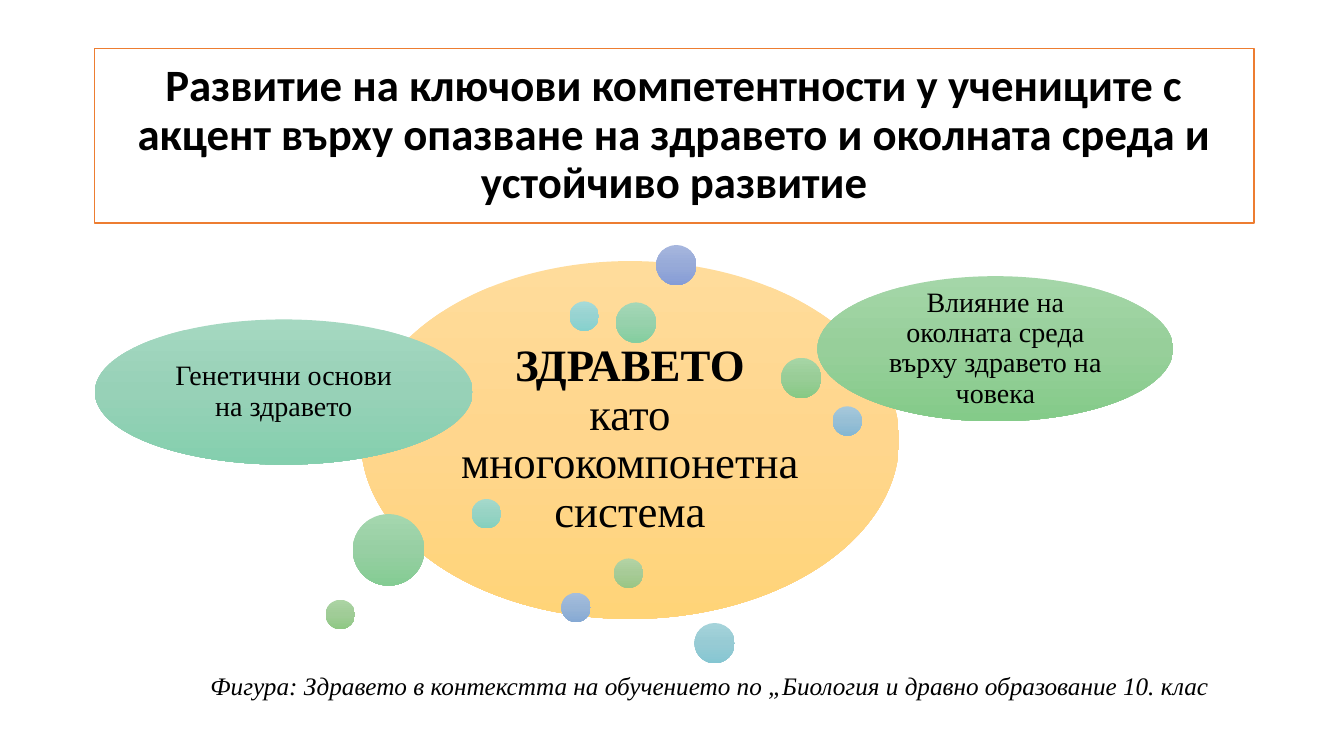
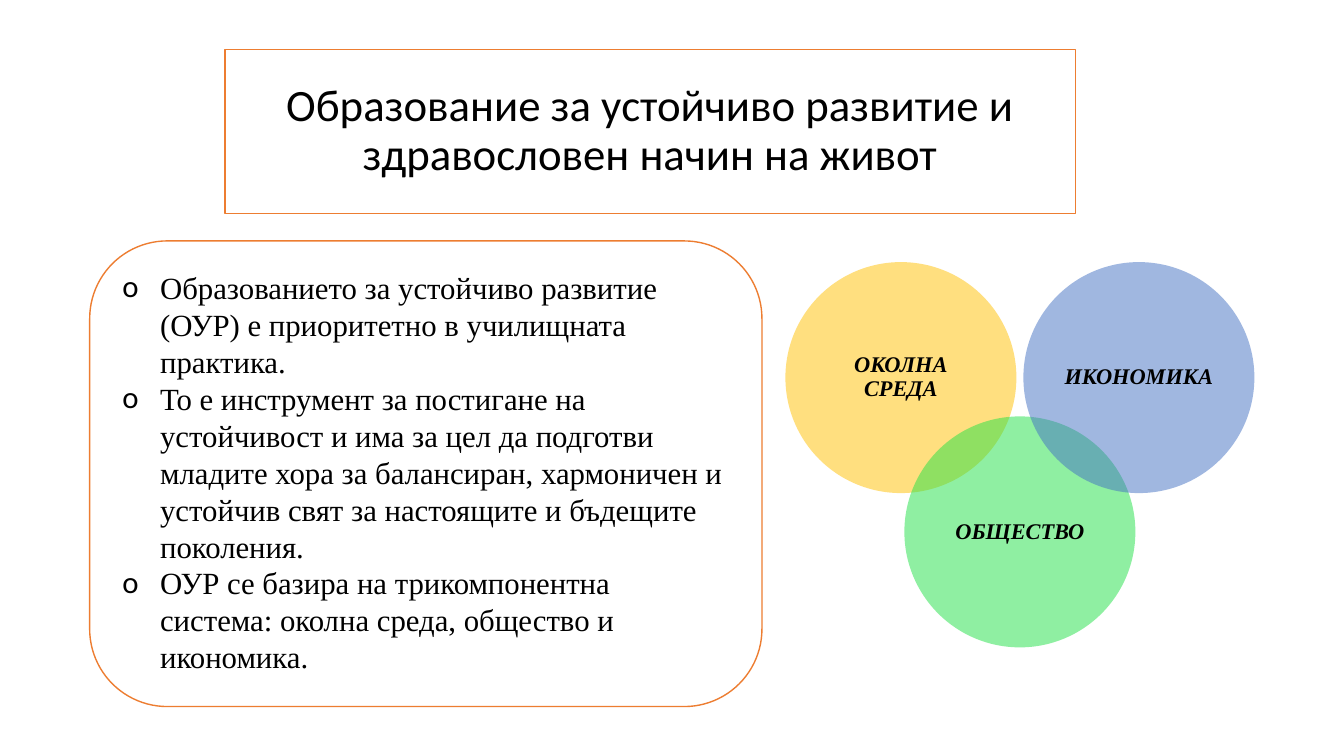
from copy import deepcopy

from lxml import etree
from pptx import Presentation
from pptx.dml.color import RGBColor
from pptx.enum import shapes, text
from pptx.oxml.ns import qn
from pptx.util import Pt

COLORS = {
    "text": "000000", "paper": "FFFFFF", "border": "ED7D31",
    "environment": "FFC000", "society": "21E146", "economy": "4371C3",
}
# Top, middle and bottom colour of each gradient
GRADIENTS = {
    "orange": ("FFDC9B", "FFD68D", "FFD478"),
    "indigo": ("A6B6DE", "97AAD8", "859CD6"),
    "blue": ("A6BEDC", "97B4D6", "85A9D4"),
    "sky": ("A6C8DB", "97BFD5", "85B7D3"),
    "cyan": ("A5D3DA", "97CBD4", "85C6D2"),
    "aqua": ("A5DAD8", "97D3D1", "85D1CD"),
    "teal": ("A5D9CB", "97D3C4", "84D0BD"),
    "sea": ("A5D8C1", "97D1B7", "84CFAE"),
    "mint": ("A5D7B7", "97D1AC", "84CE9F"),
    "jade": ("A5D7AF", "97CFA3", "84CC93"),
    "green": ("A4D6A8", "97CF9A", "84CB89"),
    "leaf": ("A6D5A5", "99CD97", "87C984"),
    "grass": ("ACD4A4", "A0CC97", "8FC884"),
    "olive": ("B3D3A4", "A7CB97", "9AC684"),
}
SANS, SERIF = "Calibri", "Times New Roman"
SMALL, MEDIUM, LARGE = 21, 28.8, 51.1  # bubble diameters


class Deck:
    """Holds the shared style and the current slide."""

    def __init__(self):
        self.prs = Presentation()
        self.prs.slide_width, self.prs.slide_height = Pt(960), Pt(540)

    def new_slide(self, title, box, bold=False):
        self.s = self.prs.slides.add_slide(self.prs.slide_layouts[5])
        sp = self.s.shapes.title
        sp.left, sp.top, sp.width, sp.height = map(Pt, box)
        self.outline(sp)
        p = self.frame(sp, text.MSO_ANCHOR.MIDDLE).paragraphs[0]
        self.center(p)
        self.run(p, title, 32, SANS, bold)

    def outline(self, sp):
        sp.fill.solid()
        sp.fill.fore_color.rgb = RGBColor.from_string(COLORS["paper"])
        sp.line.color.rgb = RGBColor.from_string(COLORS["border"])
        sp.line.width = Pt(1)

    def frame(self, sp, anchor, inset=None):
        tf = sp.text_frame
        tf.word_wrap = True
        tf.auto_size = text.MSO_AUTO_SIZE.NONE
        tf.vertical_anchor = anchor
        side, edge = (7.2, 3.6) if inset is None else (inset, inset)
        tf.margin_left = tf.margin_right = Pt(side)
        tf.margin_top = tf.margin_bottom = Pt(edge)
        return tf

    def center(self, p):
        p.alignment = text.PP_ALIGN.CENTER
        p.line_spacing = 0.9

    def run(self, p, words, size, font=SERIF, bold=False, italic=False):
        r = p.add_run()
        r.text = words
        f = r.font
        f.size, f.name, f.bold, f.italic = Pt(size), font, bold, italic
        f.color.rgb = RGBColor.from_string(COLORS["text"])

    def shape(self, kind, box):
        sp = self.s.shapes.add_shape(kind, *map(Pt, box))
        sp.shadow.inherit = False
        return sp

    def ellipse(self, box):
        sp = self.shape(shapes.MSO_SHAPE.OVAL, box)
        sp.line.fill.background()
        return sp

    def bubble(self, gradient, box):
        sp = self.ellipse(box)
        sp.fill.gradient()
        sp.fill.gradient_angle = 270  # top to bottom
        stop_list = sp._element.spPr.find(".//" + qn("a:gsLst"))
        stop_list.insert(1, deepcopy(stop_list[0]))
        stops = zip(sp.fill.gradient_stops, GRADIENTS[gradient], (0, 0.5, 1))
        for stop, color, position in stops:
            stop.color.rgb = RGBColor.from_string(color)
            stop.position = position
        return sp

    def label(self, sp, lines, size, inset, italic=False):
        """Centre (words, bold) lines inside a shape."""
        p = self.frame(sp, text.MSO_ANCHOR.MIDDLE, inset).paragraphs[0]
        self.center(p)
        for i, (words, bold) in enumerate(lines):
            if i:
                p.add_line_break()
            self.run(p, words, size, bold=bold, italic=italic)

    def venn_circle(self, color, box, words):
        sp = self.ellipse(box)
        sp.fill.solid()
        sp.fill.fore_color.rgb = RGBColor.from_string(COLORS[color])
        rgb = sp._element.spPr.find(".//" + qn("a:srgbClr"))
        etree.SubElement(rgb, qn("a:alpha"), val="50000")
        self.label(sp, [(words, True)], 16, 5, italic=True)

    def caption(self, words, box):
        sp = self.s.shapes.add_textbox(*map(Pt, box))
        tf = self.frame(sp, text.MSO_ANCHOR.TOP)
        self.run(tf.paragraphs[0], words, 18, italic=True)

    def bullet_panel(self, items, box):
        sp = self.shape(shapes.MSO_SHAPE.ROUNDED_RECTANGLE, box)
        self.outline(sp)
        tf = self.frame(sp, text.MSO_ANCHOR.TOP)
        for i, item in enumerate(items):
            p = tf.add_paragraph() if i else tf.paragraphs[0]
            p.alignment = text.PP_ALIGN.LEFT
            pPr = p._p.get_or_add_pPr()
            pPr.set("marL", str(Pt(27)))
            pPr.set("indent", str(Pt(-27)))
            color = etree.SubElement(pPr, qn("a:buClr"))
            etree.SubElement(color, qn("a:srgbClr"), val=COLORS["text"])
            etree.SubElement(pPr, qn("a:buFont"), typeface=SANS)
            etree.SubElement(pPr, qn("a:buChar"), char="o")
            self.run(p, item, 22)


def health_slide(deck):
    deck.new_slide("Развитие на ключови компетентности у учениците с акцент върху "
                   "опазване на здравето и околната среда и устойчиво развитие",
                   (67.7, 34.6, 828, 124.6), bold=True)

    # Central topic
    core = deck.bubble("orange", (257.8, 186.5, 384.5, 255.6))
    deck.label(core, [("ЗДРАВЕТО", True),
                      ("като многокомпонетна система", False)], 32, 9.4)

    # Related topics
    genetics = deck.bubble("sea", (67.7, 228.2, 270, 103.7))
    deck.label(genetics, [("Генетични основи на здравето", False)], 20, 5.8)
    influence = deck.bubble("green", (583.9, 197.3, 254.2, 103.7))
    deck.label(influence, [("Влияние на околната среда върху здравето на човека",
                            False)], 20, 5.8)

    # Decorative bubbles
    for gradient, x, y, d in (
        ("indigo", 468.7, 175, MEDIUM), ("blue", 401, 423.4, SMALL),
        ("sky", 594.7, 290.2, SMALL), ("cyan", 496.1, 445, MEDIUM),
        ("aqua", 406.8, 215.3, SMALL), ("teal", 337, 356.4, SMALL),
        ("mint", 439.9, 216, MEDIUM), ("jade", 252, 367.2, LARGE),
        ("leaf", 558, 255.6, MEDIUM), ("grass", 232.6, 428.4, SMALL),
        ("olive", 438.5, 398.9, SMALL),
    ):
        deck.bubble(gradient, (x, y, d, d))

    deck.caption("Фигура: Здравето в контекстта на обучението по „Биология и "
                 "дравно образование 10. клас", (143.3, 475.2, 734.4, 28.8))


def sustainability_slide(deck):
    deck.new_slide("Образование за устойчиво развитие и здравословен начин на живот",
                   (160.6, 35.3, 607.7, 117.4))
    deck.bullet_panel((
        "Образованието за устойчиво развитие (ОУР) е приоритетно в училищната "
        "практика.",
        "То е инструмент за постигане на устойчивост и има за цел да подготви "
        "младите хора за балансиран, хармоничен и устойчив свят за настоящите и "
        "бъдещите поколения.",
        "ОУР се базира на трикомпонентна система: околна среда, общество и "
        "икономика.",
    ), (64.1, 172.1, 480.2, 332.6))

    # Three overlapping circles, the middle one lower
    for i, (color, words, top) in enumerate((
        ("environment", "ОКОЛНА СРЕДА", 187.2),
        ("society", "ОБЩЕСТВО", 297.4),
        ("economy", "ИКОНОМИКА", 187.2),
    )):
        deck.venn_circle(color, (561 + 85 * i, top, 165, 165), words)


def main():
    deck = Deck()
    health_slide(deck)
    sustainability_slide(deck)
    deck.prs.save("out.pptx")


if __name__ == "__main__":
    main()
